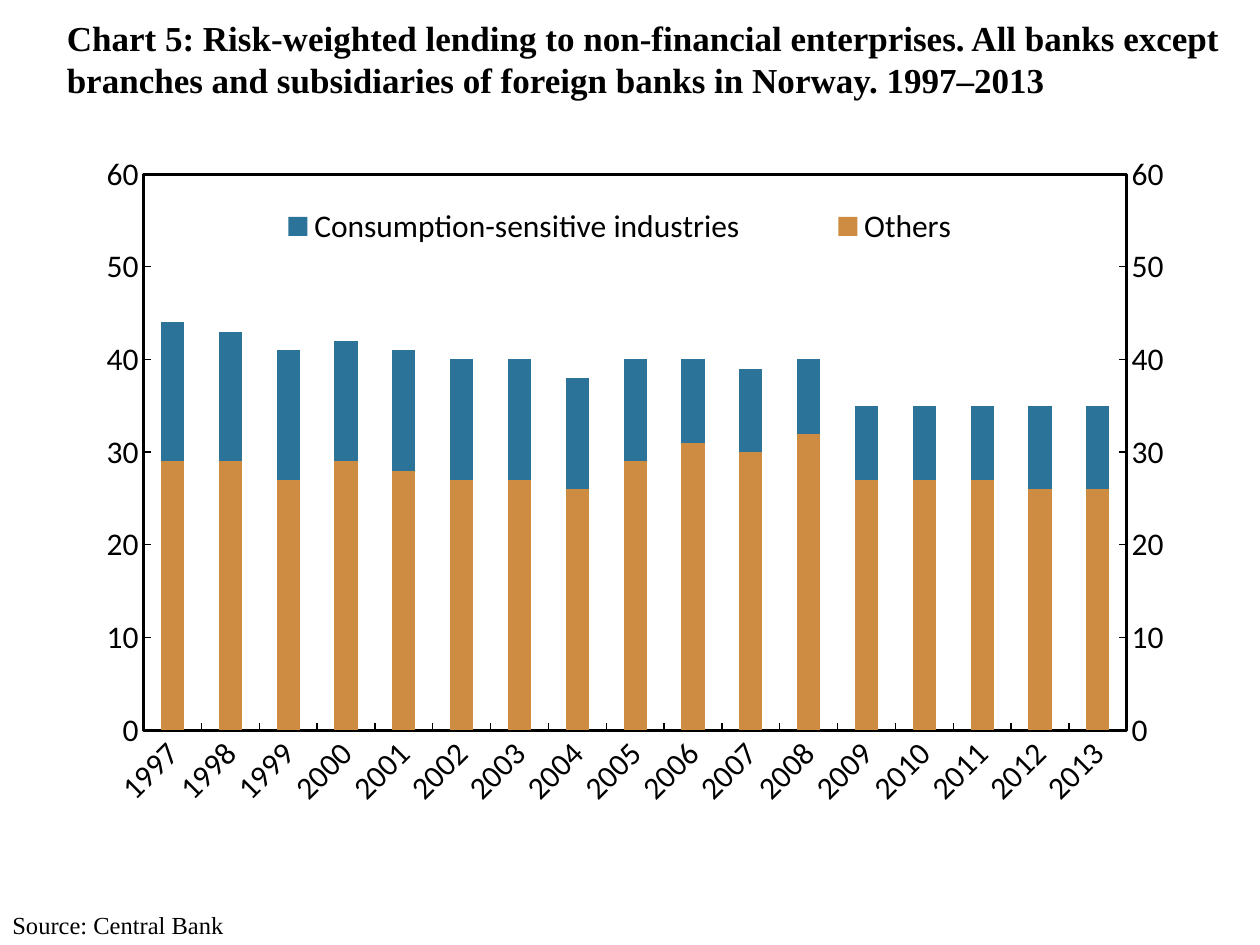
from copy import deepcopy

from pptx import Presentation
from pptx.chart.data import CategoryChartData
from pptx.dml.color import RGBColor
from pptx.enum.chart import XL_CHART_TYPE, XL_LEGEND_POSITION, XL_TICK_MARK
from pptx.enum.text import MSO_ANCHOR, MSO_AUTO_SIZE, PP_ALIGN
from pptx.oxml import parse_xml
from pptx.oxml.ns import nsdecls
from pptx.util import Inches, Pt

BLACK = "000000"
YEARS = [str(year) for year in range(1997, 2014)]
OTHERS = [29, 29, 27, 29, 28, 27, 27, 26, 29, 31, 30, 32, 27, 27, 27, 26, 26]
CONSUMPTION = [15, 14, 14, 13, 13, 13, 13, 12, 11, 9, 9, 8, 8, 8, 8, 9, 9]
SERIES = [
    ("Others", OTHERS, "CD8C41"),
    ("Consumption-sensitive industries", CONSUMPTION, "2C7399"),
    ("Series 3", [50] * len(YEARS), None),
]


def color(value):
    return RGBColor.from_string(value)


def place(shape, box):
    shape.left, shape.top, shape.width, shape.height = map(Inches, box)


def format_font(font, name, size, bold=False):
    font.name, font.size, font.bold = name, Pt(size), bold
    font.color.rgb = color(BLACK)


def write_text(shape, text, size, bold=False, anchor=MSO_ANCHOR.TOP, bottom=0.05):
    frame = shape.text_frame
    frame.word_wrap = True
    frame.auto_size = MSO_AUTO_SIZE.NONE
    frame.vertical_anchor = anchor
    frame.margin_bottom = Inches(bottom)
    paragraph = frame.paragraphs[0]
    paragraph.alignment = PP_ALIGN.LEFT
    run = paragraph.add_run()
    run.text = text
    format_font(run.font, "Times New Roman", size, bold)


def layout_element(x, y, width, height, inner=False):
    target = '<c:layoutTarget val="inner"/>' if inner else ""
    return parse_xml(
        f'<c:layout {nsdecls("c")}><c:manualLayout>{target}'
        '<c:xMode val="edge"/><c:yMode val="edge"/>'
        f'<c:x val="{x}"/><c:y val="{y}"/><c:w val="{width}"/><c:h val="{height}"/>'
        "</c:manualLayout></c:layout>"
    )


def remove_all(elements):
    for element in elements:
        element.getparent().remove(element)


def format_axis(axis):
    axis.has_major_gridlines = False
    axis.major_tick_mark = XL_TICK_MARK.INSIDE
    axis.minor_tick_mark = XL_TICK_MARK.NONE
    axis.format.line.color.rgb = color(BLACK)
    axis.format.line.width = Pt(0.75)
    format_font(axis.tick_labels.font, "Calibri", 18)


def format_plot_area(chart):
    """Position and frame the plot area."""
    area = chart.plots[0]._element.getparent()
    remove_all(area.xpath("./c:layout"))
    area.insert(0, layout_element(0.07, 0.028, 0.867, 0.819, inner=True))
    area.append(parse_xml(
        f'<c:spPr {nsdecls("c", "a")}><a:noFill/><a:ln w="{Pt(1.75)}">'
        f'<a:solidFill><a:srgbClr val="{BLACK}"/></a:solidFill></a:ln></c:spPr>'
    ))


def add_right_axis(chart):
    """Move the last series to a second pair of axes, its value axis on the right."""
    left_bars = chart.plots[0]._element
    right_bars = deepcopy(left_bars)
    remove_all(left_bars.xpath("./c:ser")[-1:])
    remove_all(right_bars.xpath("./c:ser")[:-1])
    left_bars.addnext(right_bars)

    category_axis = chart.category_axis._element
    value_axis = chart.value_axis._element
    right_categories, right_values = deepcopy(category_axis), deepcopy(value_axis)
    value_axis.addnext(right_values)
    right_values.addnext(right_categories)

    new_ids = {
        category_axis.xpath("./c:axId")[0].get("val"): "50010",
        value_axis.xpath("./c:axId")[0].get("val"): "50020",
    }
    for part in (right_bars, right_categories, right_values):
        for reference in part.xpath("./c:axId | ./c:crossAx"):
            reference.set("val", new_ids[reference.get("val")])
    right_categories.xpath("./c:delete")[0].set("val", "1")
    right_values.xpath("./c:axPos")[0].set("val", "r")
    right_values.xpath("./c:crosses")[0].set("val", "max")


def add_legend(chart):
    chart.has_legend = True
    legend = chart.legend
    legend.position = XL_LEGEND_POSITION.RIGHT
    legend.include_in_layout = True
    format_font(legend.font, "Calibri", 18)
    element = legend._element
    remove_all(element.xpath("./c:layout"))
    overlay = element.xpath("./c:overlay")[0]
    overlay.addprevious(parse_xml(
        f'<c:legendEntry {nsdecls("c")}><c:idx val="2"/><c:delete val="1"/></c:legendEntry>'
    ))
    overlay.addprevious(layout_element(0.12, 0.06, 0.74, 0.09))


def add_lending_chart(slide, box):
    data = CategoryChartData()
    data.categories = YEARS
    for name, values, _ in SERIES:
        data.add_series(name, values)
    chart = slide.shapes.add_chart(
        XL_CHART_TYPE.COLUMN_STACKED, *map(Inches, box), data
    ).chart
    chart.has_title = False
    format_font(chart.font, "Calibri", 18)

    plot = chart.plots[0]
    plot.gap_width, plot.overlap, plot.vary_by_categories = 150, 100, False
    for series, (_, _, fill) in zip(plot.series, SERIES):
        if fill:
            series.format.fill.solid()
            series.format.fill.fore_color.rgb = color(fill)
        else:
            series.format.fill.background()
        series.format.line.fill.background()

    for axis in (chart.category_axis, chart.value_axis):
        format_axis(axis)
    value_axis = chart.value_axis
    value_axis.minimum_scale, value_axis.maximum_scale, value_axis.major_unit = 0, 60, 10
    label_body = chart.category_axis._element.xpath("./c:txPr/a:bodyPr")[0]
    label_body.set("rot", str(-45 * 60000))

    add_right_axis(chart)
    format_plot_area(chart)
    add_legend(chart)


def add_title(slide, box):
    title = slide.shapes.title
    place(title, box)
    write_text(
        title,
        "Chart 5: Risk-weighted lending to non-financial enterprises. All banks except "
        "branches and subsidiaries of foreign banks in Norway. 1997–2013",
        size=20, bold=True, anchor=MSO_ANCHOR.MIDDLE, bottom=0.37,
    )


def add_source(slide, box):
    write_text(slide.shapes.add_textbox(*map(Inches, box)), "Source: Central Bank", size=14)


def main():
    presentation = Presentation()
    presentation.slide_width, presentation.slide_height = Inches(10), Inches(7.5)
    slide = presentation.slides.add_slide(presentation.slide_layouts[5])
    add_lending_chart(slide, (0.51, 1.23, 9, 5.39))
    add_title(slide, (0.43, 0, 9.37, 1.25))
    add_source(slide, (0, 7.17, 9.27, 0.34))
    presentation.save("out.pptx")


if __name__ == "__main__":
    main()
